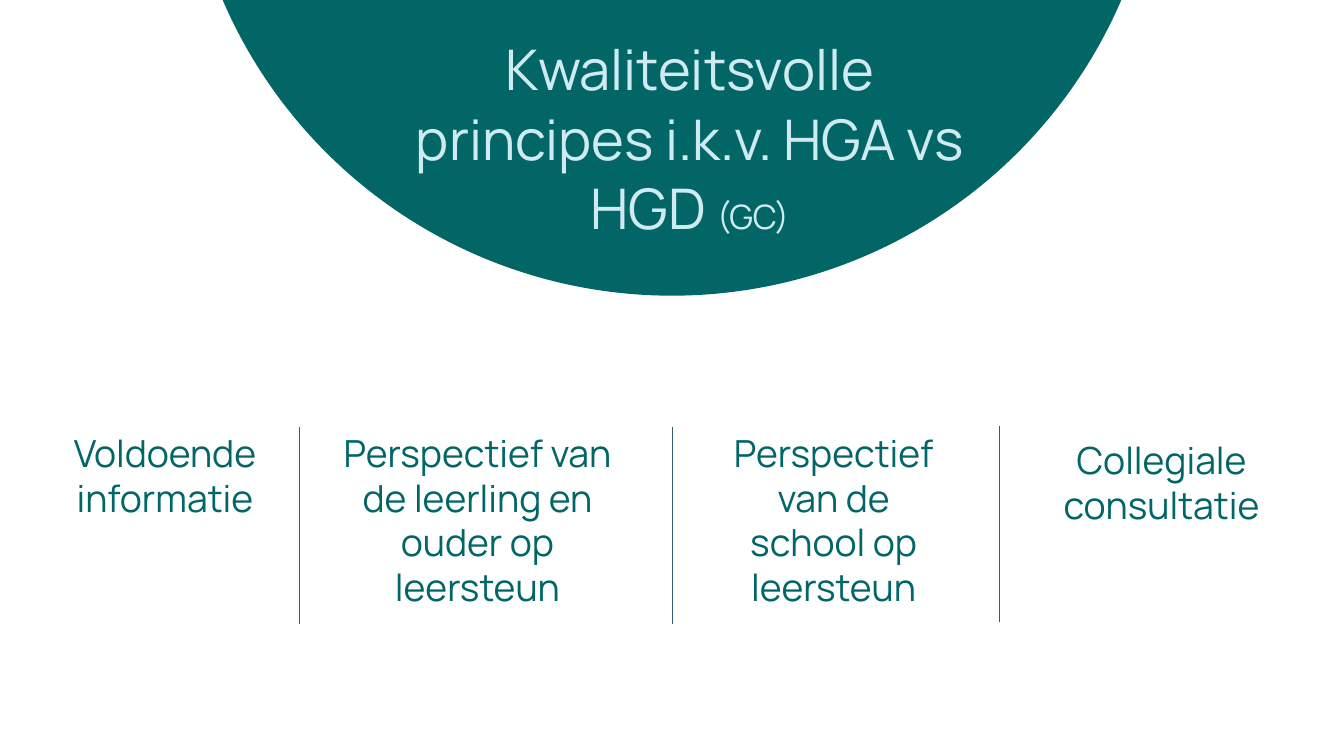
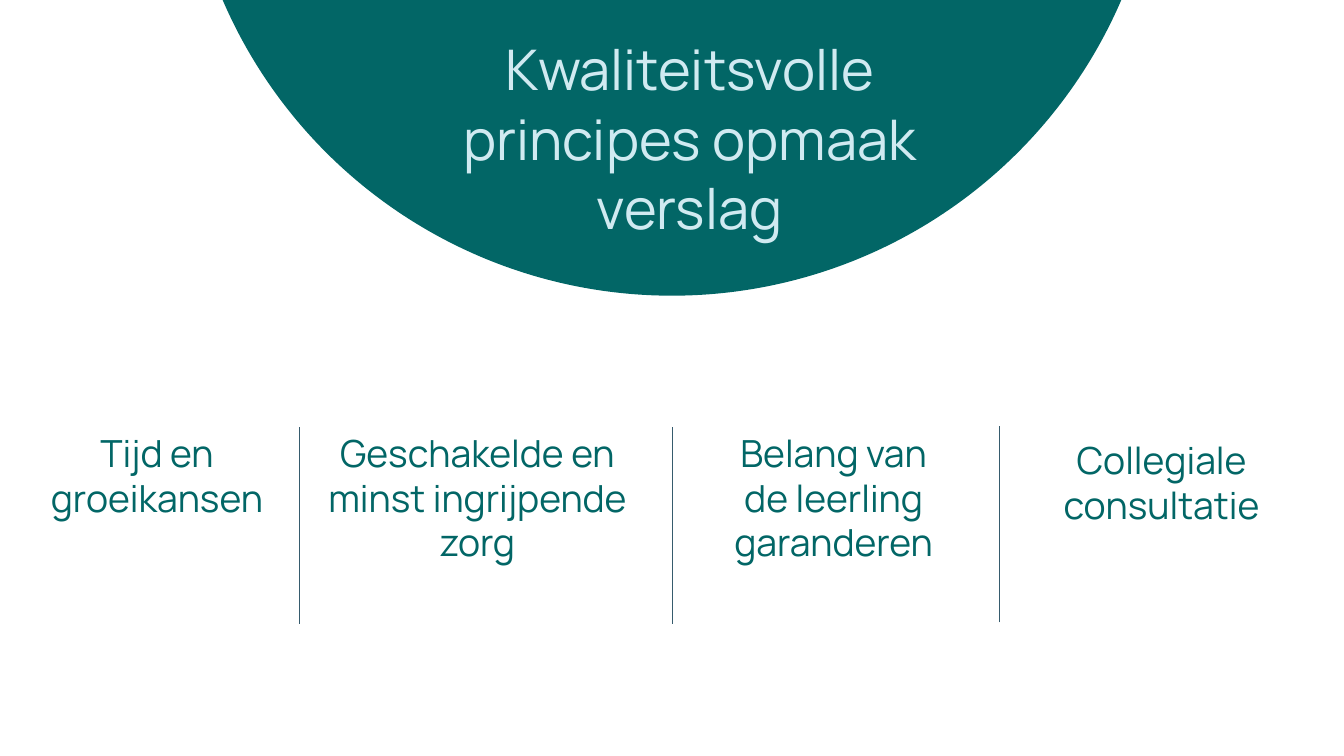
from dataclasses import dataclass

from lxml import etree
from pptx import Presentation
from pptx.dml.color import RGBColor
from pptx.enum.shapes import MSO_CONNECTOR, MSO_SHAPE
from pptx.enum.text import MSO_ANCHOR, MSO_AUTO_SIZE, PP_ALIGN
from pptx.oxml.ns import qn
from pptx.util import Pt

STRAIGHT = MSO_CONNECTOR.STRAIGHT
OVAL = MSO_SHAPE.OVAL
CENTER = PP_ALIGN.CENTER
TOP = MSO_ANCHOR.TOP
FIT_SHAPE = MSO_AUTO_SIZE.SHAPE_TO_FIT_TEXT

PX = 9144
TITLE_ONLY = 5


@dataclass(frozen=True)
class Theme:
    font: str = "Manrope"
    teal: str = "026666"
    pale: str = "D0EAF1"
    slate: str = "365B6D"
    title_size: int = 60
    note_size: int = 36
    principle_size: int = 40
    title_leading: float = 74.1
    divider_width: float = 0.75


THEME = Theme()

SLIDE_SIZE = (2000, 1125)
DOME = (272, -1016, 1456, 1456)
TITLE_BOX = (616, 49, 821, 309)
DIVIDERS = [(446, 635, 928), (1000, 635, 928), (1487, 634, 926)]

SLIDES = [
    {
        "title": [
            ("Kwaliteitsvolle principes i.k.v. HGA vs HGD ", THEME.title_size),
            ("(GC)", THEME.note_size),
        ],
        "principles": [
            ("Voldoende informatie", (72, 635, 347, 145)),
            ("Perspectief van de leerling en ouder op leersteun", (477, 635, 467, 279)),
            ("Perspectief van de school op leersteun", (1057, 635, 367, 279)),
            ("Collegiale consultatie", (1520, 646, 417, 226)),
        ],
    },
    {
        "title": [("Kwaliteitsvolle principes opmaak verslag", THEME.title_size)],
        "principles": [
            ("Tijd en groeikansen", (49, 635, 369, 145)),
            ("Geschakelde en minst ingrijpende zorg", (477, 635, 467, 279)),
            ("Belang van de leerling garanderen", (1057, 635, 367, 212)),
            ("Collegiale consultatie", (1520, 646, 417, 226)),
        ],
    },
]


def emu(lengths):
    return [length * PX for length in lengths]


def set_all(target, values):
    for name, value in values.items():
        setattr(target, name, value)


def write(box, spans, color, frame_format, leading=None):
    frame = box.text_frame
    set_all(frame, {"word_wrap": True, "auto_size": FIT_SHAPE,
                    "vertical_anchor": TOP, **frame_format})
    para = frame.paragraphs[0]
    set_all(para, {"alignment": CENTER, "line_spacing": leading})
    for text, size in spans:
        span = para.add_run()
        span.text = text
        set_all(span.font, {"name": THEME.font, "size": Pt(size)})
        span.font.color.rgb = RGBColor.from_string(color)


def add_dome(page):
    dome = page.shapes.add_shape(OVAL, *emu(DOME))
    dome.shadow.inherit = False
    dome.fill.solid()
    dome.fill.fore_color.rgb = RGBColor.from_string(THEME.teal)
    dome.line.fill.background()
    page.shapes.title.element.addprevious(dome.element)


def add_title(page, spans):
    title = page.shapes.title
    set_all(title, dict(zip(("left", "top", "width", "height"), emu(TITLE_BOX))))
    no_margins = {f"margin_{side}": 0 for side in ("left", "top", "right", "bottom")}
    write(title, spans, THEME.pale, no_margins, Pt(THEME.title_leading))


def add_divider(page, x, top, bottom):
    divider = page.shapes.add_connector(STRAIGHT, *emu((x, bottom, x, top)))
    divider.line.color.rgb = RGBColor.from_string(THEME.slate)
    divider.line.width = Pt(THEME.divider_width)
    etree.SubElement(divider.element.spPr, qn("a:effectLst"))


def add_principle(page, text, place):
    box = page.shapes.add_textbox(*emu(place))
    write(box, [(text, THEME.principle_size)], THEME.teal, {})


def main():
    deck = Presentation()
    deck.slide_width, deck.slide_height = emu(SLIDE_SIZE)
    for content in SLIDES:
        page = deck.slides.add_slide(deck.slide_layouts[TITLE_ONLY])
        add_dome(page)
        add_title(page, content["title"])
        for divider in DIVIDERS:
            add_divider(page, *divider)
        for text, place in content["principles"]:
            add_principle(page, text, place)
    deck.save("out.pptx")


if __name__ == "__main__":
    main()
